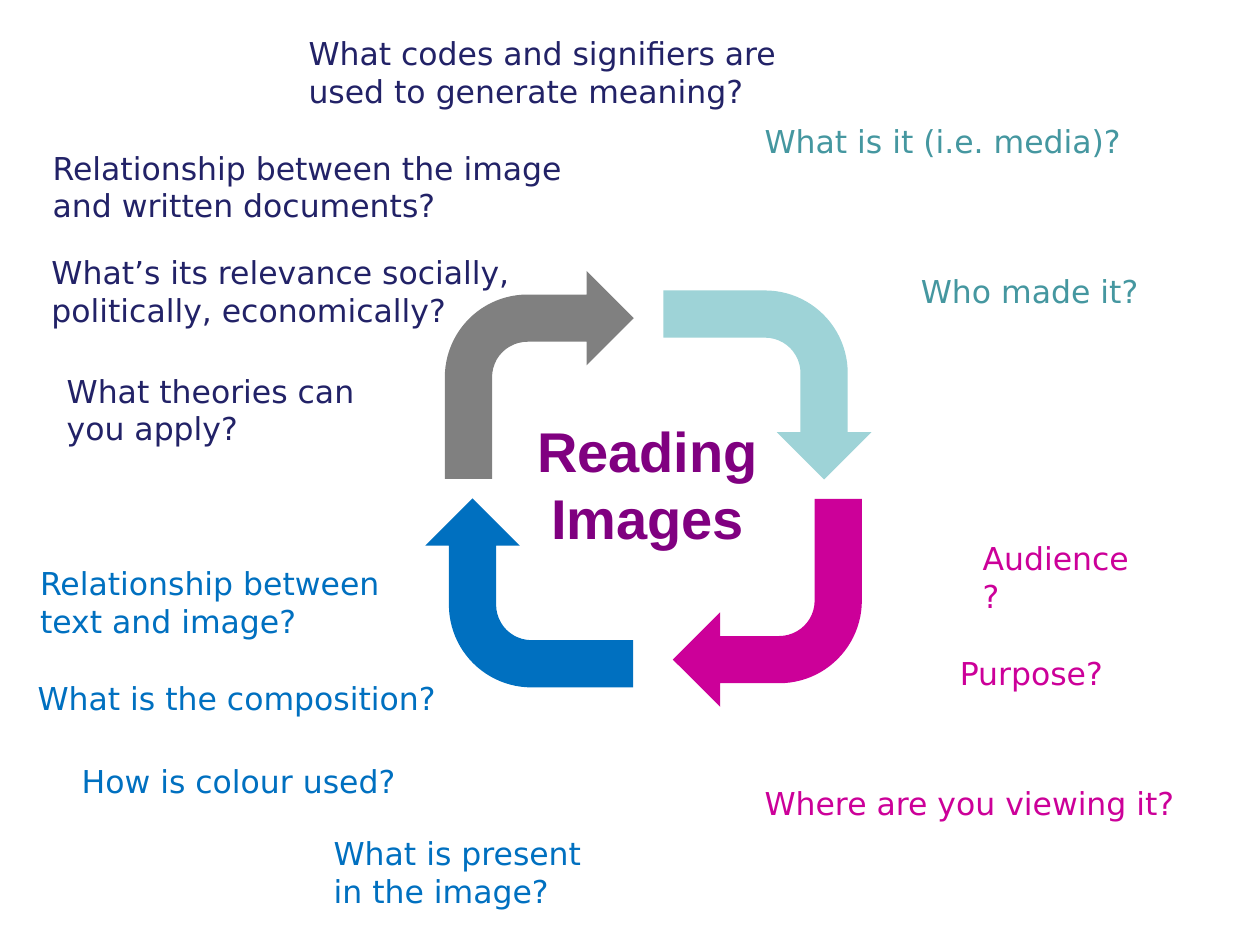
import dataclasses

import pptx
import pptx.dml.color
import pptx.enum.shapes
import pptx.enum.text
import pptx.util

Pt = pptx.util.Pt


@dataclasses.dataclass(frozen=True)
class Theme:
    teal: str = "4597A0"
    pale_teal: str = "9ED3D7"
    magenta: str = "CC0099"
    blue: str = "0070C0"
    navy: str = "222267"
    grey: str = "808080"
    purple: str = "800080"
    title_font: str = "Arial"
    question_font: str = "DejaVu Sans"
    title_size: int = 32
    question_size: int = 18


def rgb(color):
    return pptx.dml.color.RGBColor.from_string(color)


class SlideBuilder:
    ARROW_SIZE = (108, 118.8)
    LINE_HEIGHT = 22
    BOX_PADDING = 7

    def __init__(self, slide, theme):
        self.slide = slide
        self.theme = theme

    def set_font(self, p, name, size, color, bold=False):
        p.font.name = name
        p.font.size = Pt(size)
        p.font.bold = bold
        p.font.color.rgb = rgb(color)

    def title(self, text, left, top, width, height):
        sp = self.slide.shapes.title
        sp.left, sp.top, sp.width, sp.height = map(Pt, (left, top, width, height))
        tf = sp.text_frame
        tf.text = text
        tf.word_wrap = True
        tf.auto_size = pptx.enum.text.MSO_AUTO_SIZE.NONE
        p = tf.paragraphs[0]
        p.alignment = pptx.enum.text.PP_ALIGN.CENTER
        self.set_font(p, self.theme.title_font, self.theme.title_size,
                      self.theme.purple, bold=True)

    def question(self, text, color, left, top, width, lines=1):
        height = self.BOX_PADDING + lines * self.LINE_HEIGHT
        sp = self.slide.shapes.add_textbox(*map(Pt, (left, top, width, height)))
        tf = sp.text_frame
        tf.text = text
        tf.word_wrap = True
        tf.auto_size = pptx.enum.text.MSO_AUTO_SIZE.SHAPE_TO_FIT_TEXT
        self.set_font(tf.paragraphs[0], self.theme.question_font,
                      self.theme.question_size, color)

    def bent_arrow(self, color, left, top, rotation):
        """Place an arrow by its frame before rotation."""
        sp = self.slide.shapes.add_shape(
            pptx.enum.shapes.MSO_SHAPE.BENT_ARROW,
            *map(Pt, (left, top, *self.ARROW_SIZE)))
        sp.rotation = rotation
        sp.shadow.inherit = False
        sp.fill.solid()
        sp.fill.fore_color.rgb = rgb(color)
        sp.line.fill.background()


def main():
    prs = pptx.Presentation()
    prs.slide_width, prs.slide_height = Pt(720), Pt(540)
    theme = Theme()
    title_only = prs.slide_layouts[5]
    s = SlideBuilder(prs.slides.add_slide(title_only), theme)

    s.title("Reading Images", 293.8, 234, 152.6, 85)

    arrows = [
        (theme.grey, 254.2, 154.8),
        (theme.pale_teal, 384.5, 160.6),
        (theme.magenta, 384.5, 285.1),
        (theme.blue, 248.4, 279.4),
    ]
    for quarter_turns, (color, left, top) in enumerate(arrows):
        s.bent_arrow(color, left, top, 90 * quarter_turns)

    # text, left, top, width, lines
    questions = {
        theme.teal: [
            ("What is it (i.e. media)?", 429.8, 66.2, 270, 1),
            ("Who made it?", 519.1, 151.9, 166.3, 1),
        ],
        theme.magenta: [
            ("Audience?", 554.4, 304.6, 107.3, 1),
            ("Purpose?", 541.4, 370.1, 108, 1),
            ("Where are you viewing it?", 429.8, 444.2, 270, 1),
        ],
        theme.blue: [
            ("What is present in the image?", 183.6, 473, 158.4, 2),
            ("How is colour used?", 39.6, 432, 215.3, 1),
            ("What is the composition?", 14.4, 384.5, 249.1, 1),
            ("Relationship between text and image?", 15.8, 319, 215.3, 2),
        ],
        theme.navy: [
            ("What theories can you apply?", 31, 208.8, 181.4, 2),
            ("What’s its relevance socially, politically, economically?",
             22.3, 141.1, 280.1, 2),
            ("Relationship between the image and written documents?",
             23, 81.4, 331.9, 2),
            ("What codes and signifiers are used to generate meaning?",
             169.2, 15.8, 286.6, 2),
        ],
    }
    for color, group in questions.items():
        for text, left, top, width, lines in group:
            s.question(text, color, left, top, width, lines)

    prs.save("out.pptx")


if __name__ == "__main__":
    main()
